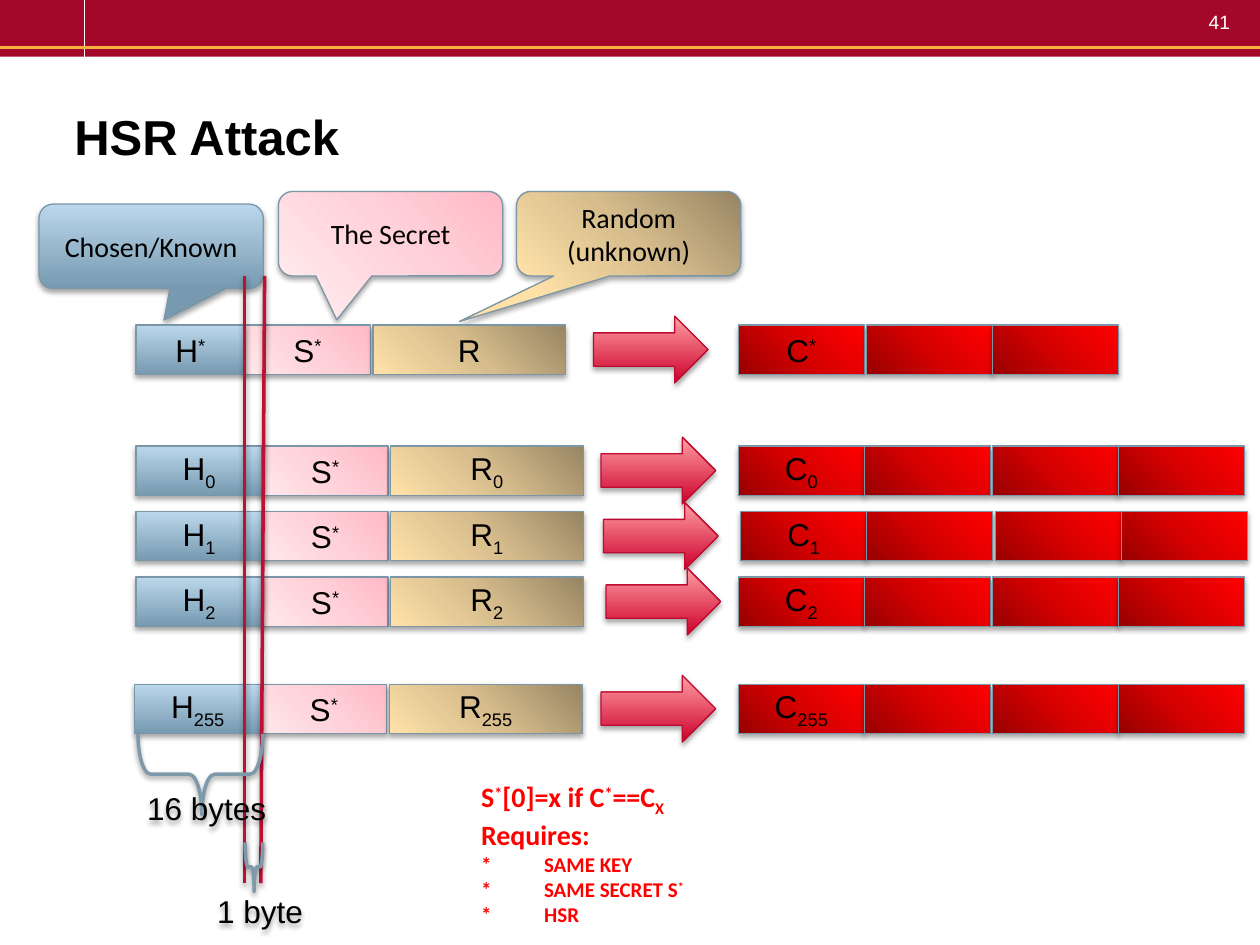
from lxml.etree import SubElement
from pptx import Presentation
from pptx.dml.color import RGBColor
from pptx.enum.shapes import MSO_CONNECTOR, MSO_SHAPE
from pptx.enum.text import MSO_ANCHOR, PP_ALIGN
from pptx.oxml import parse_xml
from pptx.oxml.ns import nsdecls, qn
from pptx.util import Inches, Pt

SUPER, SUB = 30, -25
BLUE = ([(0, "779AB1"), (100, "BBD7EB")], 270)
TAN = ([(0, "978563"), (50, "D7BD8D"), (100, "FFE1A8")], 135)
PINK = ([(0, "FFB9C5"), (50, "FFD2DA"), (100, "FFE9EC")], "tr")
RED = ([(0, "970000"), (50, "D70000"), (100, "FF0000")], "bl")
ROSE = ([(0, "CD002B"), (100, "FF9FA4")], 270)
CORNERS = {"tr": 'l="100000" b="100000"', "bl": 't="100000" r="100000"'}


def color(value):
    return RGBColor.from_string(value)


def write(frame, paragraphs, size=18, font="Arial", fill="000000", bold=False,
          align=PP_ALIGN.CENTER, anchor=MSO_ANCHOR.MIDDLE, tab=None, wrap=True):
    frame.word_wrap = wrap
    frame.vertical_anchor = anchor
    for index, parts in enumerate(paragraphs):
        paragraph = frame.add_paragraph() if index else frame.paragraphs[0]
        paragraph.alignment = align
        if tab:
            tabs = SubElement(paragraph._p.get_or_add_pPr(), qn("a:tabLst"))
            SubElement(tabs, qn("a:tab"), pos=str(Inches(tab)), algn="l")
        for part in parts:
            text, baseline = part if isinstance(part, tuple) else (part, 0)
            run = paragraph.add_run()
            run.text = text
            run.font.size = Pt(size[index] if isinstance(size, list) else size)
            run.font.name = font
            run.font.bold = bold
            run.font.color.rgb = color(fill)
            if baseline:
                run._r.get_or_add_rPr().set("baseline", str(baseline * 1000))


def add_gradient(shape, gradient):
    stops, direction = gradient
    stop_xml = "".join(
        f'<a:gs pos="{position * 1000}"><a:srgbClr val="{value}"/></a:gs>'
        for position, value in stops)
    if direction in CORNERS:
        shade = f'<a:path path="circle"><a:fillToRect {CORNERS[direction]}/></a:path>'
    else:
        shade = f'<a:lin ang="{direction * 60000}" scaled="0"/>'
    shape._element.spPr.insert(2, parse_xml(
        f'<a:gradFill {nsdecls("a")} rotWithShape="1">'
        f'<a:gsLst>{stop_xml}</a:gsLst>{shade}</a:gradFill>'))


def set_shadow(shape, alpha=0, distance=1.8):
    properties = shape._element.spPr
    for old in properties.findall(qn("a:effectLst")):
        properties.remove(old)
    effects = SubElement(properties, qn("a:effectLst"))
    if alpha:
        outer = SubElement(effects, qn("a:outerShdw"), blurRad=str(Pt(3.1)),
                           dist=str(Pt(distance)), dir="5400000", rotWithShape="0")
        black = SubElement(outer, qn("a:srgbClr"), val="000000")
        SubElement(black, qn("a:alpha"), val=str(alpha * 1000))


class SlideBuilder:
    line_color = "7A96A7"
    cell_height = 0.39

    def __init__(self, presentation):
        self.slide = presentation.slides.add_slide(presentation.slide_layouts[5])

    def title(self, text, *box):
        shape = self.slide.shapes.title
        shape.left, shape.top, shape.width, shape.height = map(Inches, box)
        write(shape.text_frame, [[text]], size=28, bold=True, align=PP_ALIGN.LEFT)

    def text(self, paragraphs, *box, **style):
        shape = self.slide.shapes.add_textbox(*map(Inches, box))
        write(shape.text_frame, paragraphs, **style)

    def shape(self, kind, *box, gradient=None, fill=None, line=None, width=0.75,
              adjustments=()):
        shape = self.slide.shapes.add_shape(kind, *map(Inches, box))
        for index, value in enumerate(adjustments):
            shape.adjustments[index] = value
        if gradient:
            add_gradient(shape, gradient)
        elif fill:
            shape.fill.solid()
            shape.fill.fore_color.rgb = color(fill)
        else:
            shape.fill.background()
        if line:
            shape.line.color.rgb = color(line)
            shape.line.width = Pt(width)
        else:
            shape.line.fill.background()
        set_shadow(shape, alpha=35 if line else 0)
        return shape

    def line(self, *ends, line, width, shadow=0):
        connector = self.slide.shapes.add_connector(
            MSO_CONNECTOR.STRAIGHT, *map(Inches, ends))
        connector.line.color.rgb = color(line)
        connector.line.width = Pt(width)
        set_shadow(connector, shadow, 1.6)

    def callout(self, text, left, top, gradient, tip):
        shape = self.shape(MSO_SHAPE.ROUNDED_RECTANGULAR_CALLOUT, left, top, 1.78, 0.67,
                           gradient=gradient, line=self.line_color,
                           adjustments=(*tip, 0.167))
        write(shape.text_frame, [[text]], size=16, font="Calibri")

    def cell(self, parts, left, top, width, gradient):
        shape = self.shape(MSO_SHAPE.RECTANGLE, left, top, width, self.cell_height,
                           gradient=gradient, line=self.line_color)
        if parts:
            write(shape.text_frame, [parts])

    def row(self, index, top, left, arrow_left, cipher_left, header_width=1,
            cipher_offsets=(0, 1, 2.02, 3.02)):
        secret_left = left + header_width
        self.cell(["S", ("*", SUPER)], secret_left, top, 1, PINK)
        self.cell(["H", index], left, top, header_width, BLUE)
        random_parts = ["R"] if index[0] == "*" else ["R", index]
        self.cell(random_parts, secret_left + 1.02, top, 1.53, TAN)
        for offset in cipher_offsets:
            parts = None if offset else ["C", index]
            self.cell(parts, cipher_left + offset, top, 1, RED)
        self.shape(MSO_SHAPE.RIGHT_ARROW, arrow_left, top - 0.07, 0.91, 0.53,
                   gradient=ROSE, line="BE0A30")

    def brace(self, text, *box):
        shape = self.shape(MSO_SHAPE.RIGHT_BRACE, *box, line="7E99AA", width=2,
                           adjustments=(0.158, 0.488))
        shape.rotation = 90
        set_shadow(shape, 38, 1.6)
        frame = shape.text_frame
        write(frame, [[text]], wrap=False)
        frame.margin_left, frame.margin_top = Inches(1), 0
        frame.margin_right, frame.margin_bottom = Inches(0.1), Inches(0.05)
        frame._txBody.bodyPr.set("vert", "vert270")


def main():
    presentation = Presentation()
    presentation.slide_width, presentation.slide_height = Inches(10), Inches(7.5)
    builder = SlideBuilder(presentation)

    builder.shape(MSO_SHAPE.RECTANGLE, 0, 0, 10, 0.45, fill="A5072B")
    builder.line(0.67, 0, 0.67, 0.45, line="FFFFFF", width=0.75)
    builder.text([["41"]], 9.44, 0.03, 0.42, 0.29, size=11, fill="FFFFFF",
                 align=PP_ALIGN.RIGHT, anchor=MSO_ANCHOR.TOP)
    builder.line(0, 0.38, 10, 0.38, line="F7B23D", width=1.75)
    builder.title("HSR Attack", 0.49, 0.64, 9, 0.88)

    builder.callout("Chosen/Known", 0.31, 1.62, BLUE, (0.057, 0.874))
    builder.callout("The Secret", 2.21, 1.52, PINK, (-0.24, 1.019))
    builder.callout("Random (unknown)", 4.1, 1.52, TAN, (-0.755, 1.04))

    builder.row(("*", SUPER), 2.58, 1.08, 4.71, 5.86, header_width=0.86,
                cipher_offsets=(0, 1.02, 2.02))
    for index, top, left, arrow_left, cipher_left in [
        ("0", 3.54, 1.08, 4.77, 5.86),
        ("1", 4.06, 1.08, 4.79, 5.88),
        ("2", 4.58, 1.08, 4.81, 5.86),
        ("255", 5.43, 1.07, 4.77, 5.86),
    ]:
        builder.row((index, SUB), top, left, arrow_left, cipher_left)

    for bottom_x, top_x in [(2.07, 2.1), (1.94, 1.94)]:
        builder.line(bottom_x, 7.01, top_x, 2.19, line="BE0F34", width=2, shadow=38)
    builder.brace("16 bytes", 1.27, 5.65, 0.64, 0.99)
    builder.brace("1 byte", 1.82, 6.81, 0.39, 0.14)

    builder.text(
        [["S", ("*", SUPER), "[0]=x if C", ("*", SUPER), "==C", ("X", SUB)],
         ["Requires:"],
         ["*\tSAME KEY"],
         ["*\tSAME SECRET S", ("*", SUPER)],
         ["*\tHSR"]],
        3.72, 6.14, 5.15, 1.1, size=[16, 16, 12, 12, 12], font="Calibri", fill="FF0000",
        bold=True, align=PP_ALIGN.LEFT, anchor=MSO_ANCHOR.TOP, tab=0.5)

    presentation.save("out.pptx")


if __name__ == "__main__":
    main()
